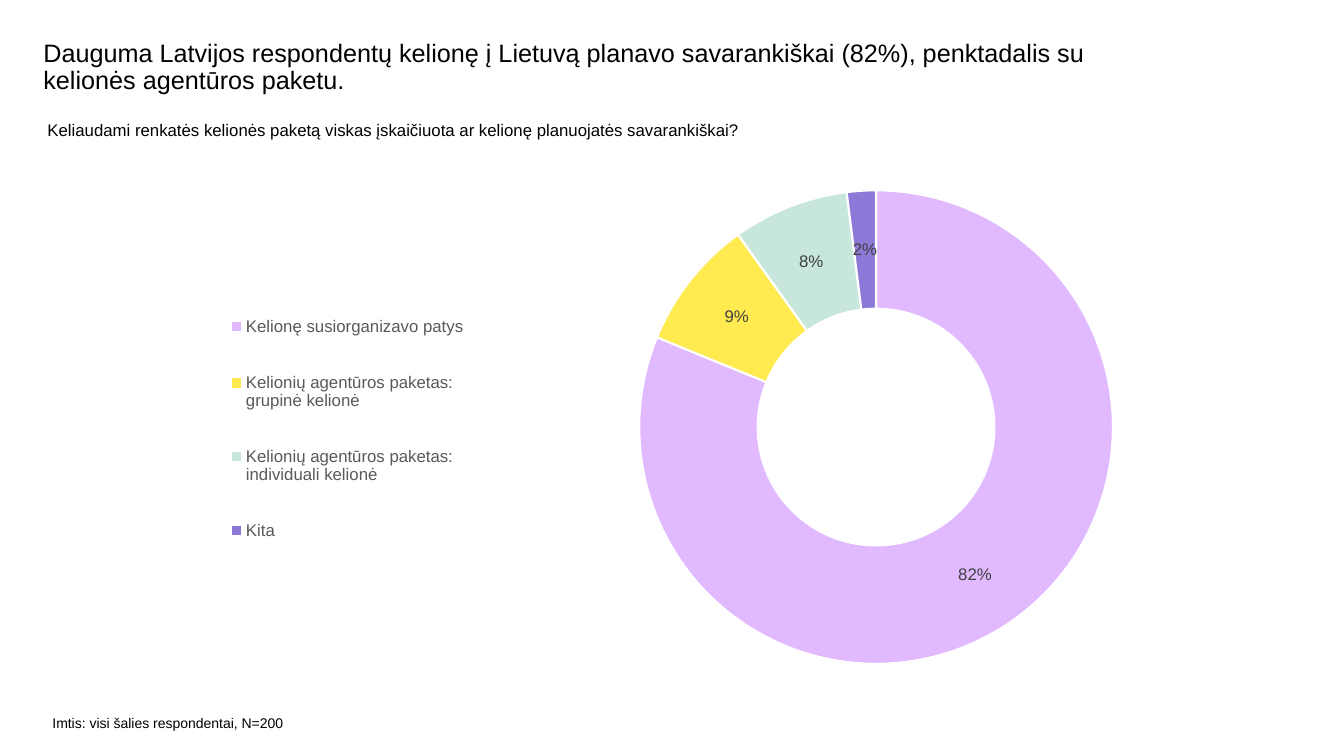
from lxml import etree
from pptx import Presentation
from pptx import util as u
from pptx.chart.data import CategoryChartData
from pptx.dml.color import RGBColor
from pptx.enum import chart as charts
from pptx.enum import text
from pptx.oxml import parse_xml
from pptx.oxml.ns import nsdecls, qn

FONT = "Arial"
COLORS = {
    "text": "000000",
    "legend": "595959",
    "label": "404040",
    "border": "FFFFFF",
    "self": "E1B9FF",
    "group": "FFEB50",
    "individual": "C7E6DC",
    "other": "8C78D7",
}
ANSWERS = [
    ("Kelionę susiorganizavo patys", 0.82, "self"),
    ("Kelionių agentūros paketas: grupinė kelionė", 0.09, "group"),
    ("Kelionių agentūros paketas: individuali kelionė", 0.08, "individual"),
    ("Kita", 0.02, "other"),
]


def set_font(font, size, color):
    """Apply the slide font with a size and a named colour."""
    font.name = FONT
    font.size = u.Pt(size)
    font.color.rgb = RGBColor.from_string(COLORS[color])


def add_text(slide, box, wording, size, line_spacing=1.0):
    """Add a wrapped text box without margins."""
    shape = slide.shapes.add_textbox(*map(u.Inches, box))
    frame = shape.text_frame
    frame.word_wrap = True
    frame.vertical_anchor = text.MSO_ANCHOR.TOP
    frame.margin_left = frame.margin_right = 0
    frame.margin_top = frame.margin_bottom = 0
    paragraph = frame.paragraphs[0]
    paragraph.line_spacing = line_spacing
    run = paragraph.add_run()
    run.text = wording
    set_font(run.font, size, "text")


def make_layout(box, inner=False):
    """Return a manual layout element for a box in chart fractions."""
    layout = parse_xml(f"<c:layout {nsdecls('c')}><c:manualLayout/></c:layout>")
    settings = [("layoutTarget", "inner")] if inner else []
    settings += [("xMode", "edge"), ("yMode", "edge")]
    settings += zip("xywh", box)
    for name, value in settings:
        etree.SubElement(layout[0], qn(f"c:{name}")).set("val", str(value))
    return layout


def add_doughnut(slide, box):
    """Add the doughnut of planning answers with its legend on the left."""
    data = CategoryChartData(number_format="0%")
    data.categories = [name for name, _, _ in ANSWERS]
    data.add_series("Series 1", [value for _, value, _ in ANSWERS])
    chart = slide.shapes.add_chart(
        charts.XL_CHART_TYPE.DOUGHNUT, *map(u.Inches, box), data
    ).chart
    set_font(chart.font, 10, "text")
    chart.has_title = False

    chart.has_legend = True
    legend = chart.legend
    legend.position = charts.XL_LEGEND_POSITION.BOTTOM
    legend.include_in_layout = False
    set_font(legend.font, 12, "legend")
    legend_element = legend._element
    for layout in legend_element.findall(qn("c:layout")):
        legend_element.remove(layout)
    legend_element.find(qn("c:legendPos")).addnext(
        make_layout((0.08, 0.2, 0.23, 0.6))
    )

    plot = chart.plots[0]
    plot.vary_by_categories = True
    plot._element.find(qn("c:holeSize")).set("val", "50")
    plot_area = plot._element.getparent()
    for layout in plot_area.findall(qn("c:layout")):
        plot_area.remove(layout)
    plot_area.insert(0, make_layout((0.45, 0.02, 0.415, 0.953), inner=True))

    series = plot.series[0]
    for index, (_, _, color) in enumerate(ANSWERS):
        style = series.points[index].format
        style.fill.solid()
        style.fill.fore_color.rgb = RGBColor.from_string(COLORS[color])
        style.line.color.rgb = RGBColor.from_string(COLORS["border"])
        style.line.width = u.Pt(1.5)
    labels = series.data_labels
    labels.show_value = True
    labels.show_percentage = False
    labels.number_format = "0%"
    labels.number_format_is_linked = False
    set_font(labels.font, 12, "label")


def build_slide(presentation):
    """Place the heading, question, chart and sample note."""
    slide = presentation.slides.add_slide(presentation.slide_layouts[6])
    add_text(
        slide,
        (0.43, 0.4, 11.25, 0.6),
        "Dauguma Latvijos respondentų kelionę į Lietuvą planavo savarankiškai "
        "(82%), penktadalis su kelionės agentūros paketu.",
        18,
        0.9,
    )
    add_text(
        slide,
        (0.47, 1.19, 11.89, 0.61),
        "Keliaudami renkatės kelionės paketą viskas įskaičiuota ar kelionę "
        "planuojatės savarankiškai?",
        12,
    )
    add_text(
        slide, (0.52, 7.09, 2.53, 0.24), "Imtis: visi šalies respondentai, N=200", 10
    )
    add_doughnut(slide, (1.24, 1.79, 11.33, 4.93))


def main():
    """Create and save the presentation."""
    presentation = Presentation()
    presentation.slide_width = u.Inches(13.33)
    presentation.slide_height = u.Inches(7.5)
    build_slide(presentation)
    presentation.save("out.pptx")


if __name__ == "__main__":
    main()
